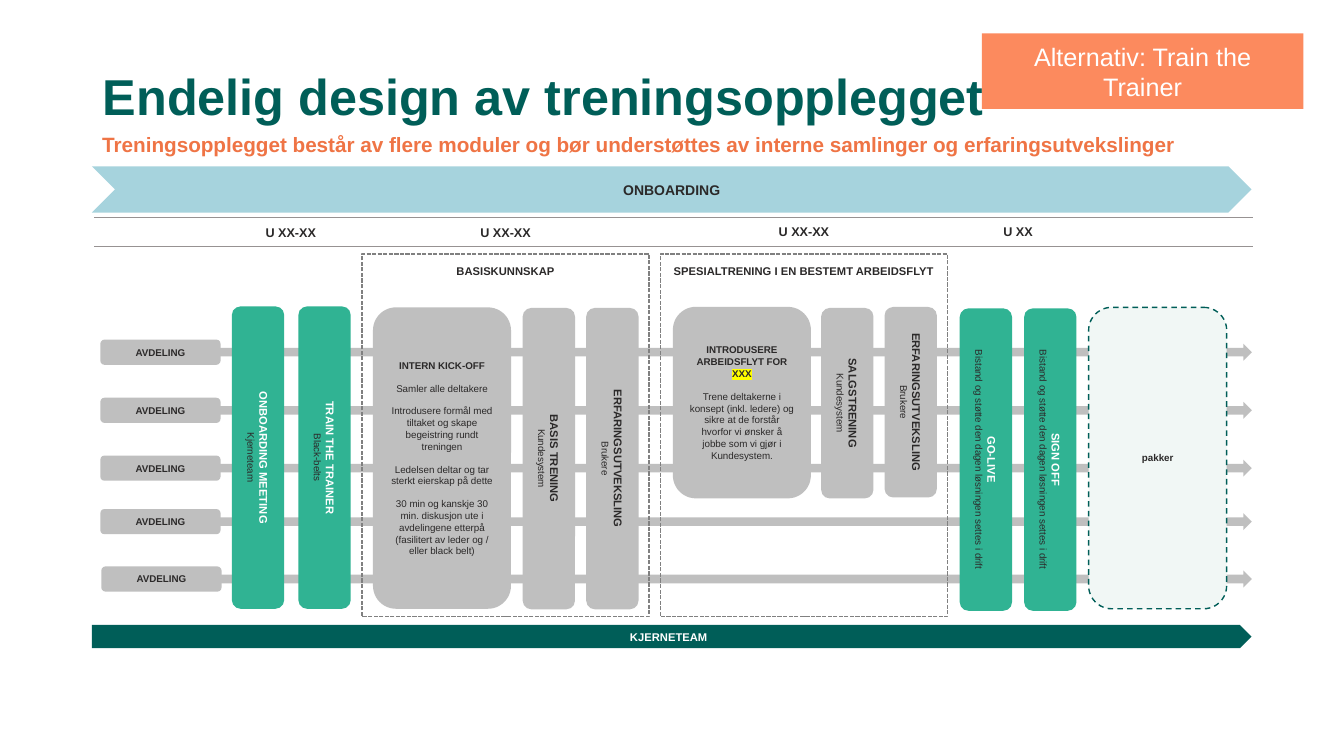
"""Build the training plan slide with its lanes, modules and headings."""
import dataclasses
import typing

import lxml.etree
import pptx
import pptx.dml.color
import pptx.enum.dml
import pptx.enum.shapes
import pptx.enum.text
import pptx.oxml.ns
import pptx.util

Pt = pptx.util.Pt
Form = pptx.enum.shapes.MSO_SHAPE
Dash = pptx.enum.dml.MSO_LINE
Align = pptx.enum.text.PP_ALIGN
Hold = pptx.enum.text.MSO_ANCHOR
Fit = pptx.enum.text.MSO_AUTO_SIZE
qn = pptx.oxml.ns.qn

DARK, WHITE, GREY, GREEN, TEAL = "2B2929", "FFFFFF", "BFBFBF", "30B393", "005E58"


@dataclasses.dataclass
class Run:
    text: str
    size: float = 7
    bold: bool = False
    color: str = DARK
    mark: str = ""


@dataclasses.dataclass
class Bar:
    x: float
    y: float
    span: float
    head: str
    sub: str
    fill: str = GREY


@dataclasses.dataclass
class Card:
    x: float
    y: float
    span: float
    paras: list[list[Run]]
    fill: str = GREY
    edge: str = ""


@dataclasses.dataclass
class Label:
    x: float
    y: float
    wide: float
    high: float
    text: str
    size: float


BARS = [
    Bar(184.3, 326.9, 216, "ONBOARDING MEETING", "Kjerneteam", GREEN),
    Bar(231.8, 326.9, 216, "TRAIN THE TRAINER", "Black-belts", GREEN),
    Bar(392, 327.6, 215.3, "BASIS TRENING", "Kundesystem"),
    Bar(437.4, 327.6, 215.3, "ERFARINGSUTVEKSLING", "Brukere"),
    Bar(605.2, 288, 136.1, "SALGSTRENING", "Kundesystem"),
    Bar(650.5, 287.3, 136.1, "ERFARINGSUTVEKSLING", "Brukere"),
    Bar(704.2, 328.3, 216, "GO-LIVE",
        "Bistand og støtte den dagen løsningen settes i drift", GREEN),
    Bar(750.2, 328.3, 216, "SIGN OFF",
        "Bistand og støtte den dagen løsningen settes i drift", GREEN),
]

CARDS = [
    Card(315.7, 327.2, 215.3, [
        [Run("INTERN KICK-OFF", bold=True)],
        [Run("Samler alle deltakere")],
        [Run("Introdusere formål med tiltaket og skape begeistring rundt treningen")],
        [Run("Ledelsen deltar og tar sterkt eierskap på dette")],
        [Run("30 min og kanskje 30 min. diskusjon ute i avdelingene etterpå\n"
             "(fasilitert av leder og / eller black belt)")],
    ]),
    Card(529.9, 287.6, 136.8, [
        [Run("INTRODUSERE ARBEIDSFLYT FOR ", bold=True),
         Run("XXX", bold=True, mark="FFFF00")],
        [Run("Trene deltakerne i konsept (inkl. ledere) og sikre at de forstår "
             "hvorfor vi ønsker å jobbe som vi gjør i Kundesystem.")],
    ]),
    Card(826.9, 327.2, 215.3, [[Run("pakker", bold=True)]], "F1F7F5", TEAL),
]

FRAMES = [258.5, 471.6]
LABELS = [
    Label(165.6, 157, 84.2, 18, "U XX-XX", 9),
    Label(FRAMES[0], 157, 205.2, 18, "U XX-XX", 9),
    Label(FRAMES[1], 156.6, 205.2, 18, "U XX-XX", 9),
    Label(685.4, 156.6, 83.5, 18, "U XX", 9),
    Label(FRAMES[0], 185, 205.2, 17, "BASISKUNNSKAP", 8),
    Label(FRAMES[1], 185, 205.2, 17, "SPESIALTRENING I EN BESTEMT ARBEIDSFLYT", 8),
]
LANES = [(143.3, 245.5), (143.3, 287), (143.3, 328.3), (143.3, 366.5), (144, 407.5)]


def tint(code: str) -> pptx.dml.color.RGBColor:
    """Turn a hex string into a colour."""
    return pptx.dml.color.RGBColor.from_string(code)


def write(frame: typing.Any, paras: list[list[Run]], *, align: typing.Any = Align.CENTER,
          hold: typing.Any = Hold.MIDDLE, fit: typing.Any = Fit.NONE, gap: float = 0,
          lead: float = 1, pad: tuple[float, float] = (7.2, 3.6)) -> None:
    """Fill a text frame with formatted paragraphs."""
    frame.word_wrap, frame.auto_size, frame.vertical_anchor = True, fit, hold
    frame.margin_left = frame.margin_right = Pt(pad[0])
    frame.margin_top = frame.margin_bottom = Pt(pad[1])
    for n, runs in enumerate(paras):
        para = frame.add_paragraph() if n else frame.paragraphs[0]
        para.alignment, para.line_spacing = align, lead
        para.space_before = Pt(gap if n else 0)
        for run in runs:
            for k, part in enumerate(run.text.split("\n")):
                if k:
                    para.add_line_break()
                piece = para.add_run()
                piece.text = part
                font = piece.font
                font.name, font.size, font.bold = "Arial", Pt(run.size), run.bold
                font.color.rgb = tint(run.color)
                if run.mark:
                    mark = lxml.etree.Element(qn("a:highlight"))
                    lxml.etree.SubElement(mark, qn("a:srgbClr"), val=run.mark)
                    font._element.find(qn("a:solidFill")).addnext(mark)


def draw(shapes: typing.Any, form: typing.Any, x: float, y: float, wide: float, high: float,
         fill: str = "", edge: str = "", dash: typing.Any = Dash.DASH) -> typing.Any:
    """Add a preset shape without a shadow."""
    shape = shapes.add_shape(form, Pt(x), Pt(y), Pt(wide), Pt(high))
    shape.shadow.inherit = False
    if fill:
        shape.fill.solid()
        shape.fill.fore_color.rgb = tint(fill)
    else:
        shape.fill.background()
    if edge:
        shape.line.color.rgb = tint(edge)
        shape.line.width, shape.line.dash_style = Pt(1), dash
    else:
        shape.line.fill.background()
    return shape


def turn(shapes: typing.Any, item: Bar | Card, deep: float, edge: str = "") -> typing.Any:
    """Add a rounded box turned upright about its centre."""
    shape = draw(shapes, Form.ROUNDED_RECTANGLE, item.x - item.span / 2,
                 item.y - deep / 2, item.span, deep, item.fill, edge)
    shape.rotation = 90
    return shape


def place(shape: typing.Any, x: float, y: float, wide: float, high: float) -> None:
    """Move and size a placeholder."""
    shape.left, shape.top, shape.width, shape.height = Pt(x), Pt(y), Pt(wide), Pt(high)


def main() -> None:
    """Draw the slide and save it."""
    deck = pptx.Presentation()
    deck.slide_width, deck.slide_height = Pt(960), Pt(540)
    slide = deck.slides.add_slide(deck.slide_layouts[1])
    shapes = slide.shapes
    title, body = shapes.title, slide.placeholders[1]
    place(title, 66.2, 47.5, 828, 67)
    write(title.text_frame, [[Run("Endelig design av treningsopplegget", 36, True, TEAL)]],
          align=Align.LEFT, hold=Hold.TOP, lead=0.9)
    place(body, 65.8, 91.4, 828, 25.2)
    write(body.text_frame, [[Run(
        "Treningsopplegget består av flere moduler og bør understøttes av interne "
        "samlinger og erfaringsutvekslinger", 14.8, True, "EF7445")]],
        align=Align.LEFT, lead=0.9)
    props = body.text_frame.paragraphs[0]._p.get_or_add_pPr()
    props.set("marL", "0")
    props.set("indent", "0")
    lxml.etree.SubElement(props, qn("a:buNone"))

    for x, y in LANES:
        lane = shapes.add_group_shape().shapes
        draw(lane, Form.RIGHT_ARROW, x, y, 894.2 - x, 12.2, GREY)
        tag = draw(lane, Form.ROUNDED_RECTANGLE, x - 71.6, y - 2.9, 85.9, 18, GREY)
        write(tag.text_frame, [[Run("AVDELING", bold=True)]])
    for x in FRAMES:
        draw(shapes, Form.RECTANGLE, x, 181.4, 205.2, 259.2, edge="808080",
             dash=Dash.SQUARE_DOT)
    for y in (155.5, 175.7):
        rule = shapes.add_connector(pptx.enum.shapes.MSO_CONNECTOR.STRAIGHT,
                                    Pt(895), Pt(y), Pt(67), Pt(y))
        rule.line.color.rgb, rule.line.width = tint("979292"), Pt(0.5)
        lxml.etree.SubElement(rule._element.spPr, qn("a:effectLst"))
    for item in LABELS:
        label = shapes.add_textbox(Pt(item.x), Pt(item.y), Pt(item.wide), Pt(item.high))
        write(label.text_frame, [[Run(item.text, item.size, True)]], hold=Hold.TOP,
              fit=Fit.SHAPE_TO_FIT_TEXT)
    for bar in BARS:
        tone = WHITE if bar.fill == GREEN else DARK
        write(turn(shapes, bar, 37.4).text_frame,
              [[Run(bar.head, 8, True, tone)], [Run(bar.sub)]], pad=(8.6, 8.6))
    for card in CARDS:
        frame = turn(shapes, card, 98.6, card.edge).text_frame
        write(frame, card.paras, gap=8)
        frame._txBody.bodyPr.set("vert", "vert270")
    for form, y, high, fill, run in (
            (Form.CHEVRON, 118.8, 33.1, "A6D3DD", Run("ONBOARDING", 10, True)),
            (Form.PENTAGON, 446.4, 16.6, TEAL, Run("KJERNETEAM", 8, True, WHITE))):
        write(draw(shapes, form, 65.6, y, 828.4, high, fill).text_frame, [[run]])
    note = draw(shapes, Form.RECTANGLE, 701.3, 23.8, 229.7, 54, "FC8A5E")
    write(note.text_frame, [[Run("Alternativ: Train the Trainer", 18, color=WHITE)]])
    deck.save("out.pptx")


if __name__ == "__main__":
    main()
